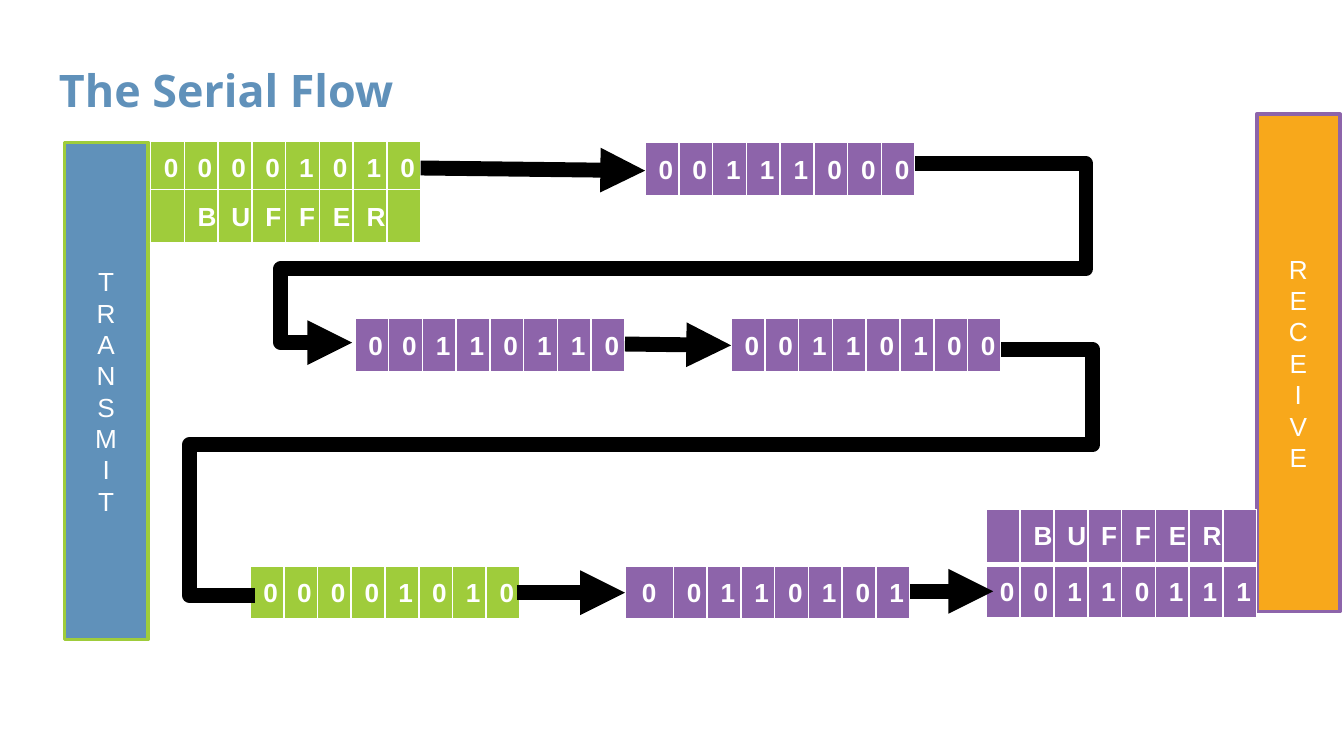
from lxml import etree
from pptx import Presentation
from pptx.dml.color import RGBColor
from pptx.enum.shapes import MSO_CONNECTOR as CONN, MSO_SHAPE as SHAPE
from pptx.enum.text import MSO_ANCHOR as ANCHOR, PP_ALIGN as ALIGN
from pptx.oxml.ns import qn
from pptx.util import Inches, Pt

BLUE = RGBColor(0x60, 0x91, 0xBA)
GREEN = RGBColor(0x9F, 0xCC, 0x3B)
PURPLE = RGBColor(0x8D, 0x64, 0xAA)
ORANGE = RGBColor(0xF8, 0xA8, 0x1B)
WHITE = RGBColor(0xFF, 0xFF, 0xFF)
BLACK = RGBColor(0, 0, 0)

# Content: positions are in inches
SLIDE_W = 10
SLIDE_H = SLIDE_W * 9 / 16
TITLE = "The Serial Flow"
BAR_W, BAR_H = 0.62, 3.7
CELL_W, CELL_H = 2.01 / 8, 0.41
WIDE_CELL = 0.36
BORDERS = {"a:lnL": 1, "a:lnR": 1, "a:lnT": 1, "a:lnB": 3}  # points

STATIONS = [  # word, left, top, fill, line
    ("TRANSMIT", 0.48, 1.06, BLUE, GREEN),
    ("RECEIVE", 9.35, 0.85, ORANGE, PURPLE),
]
BYTES = [  # cells, left, top, fill, first column width
    ("00110111", 7.34, 4.2, PURPLE, CELL_W),
    ("00110101", 4.65, 4.21, PURPLE, WIDE_CELL),
    ("00001010", 1.86, 4.21, GREEN, CELL_W),
    ("00110100", 5.44, 2.37, PURPLE, CELL_W),
    ("00110110", 2.64, 2.37, PURPLE, CELL_W),
    ("00111000", 4.8, 1.06, PURPLE, CELL_W),
    ("00001010", 1.12, 1.05, GREEN, CELL_W),
    (" BUFFER ", 1.12, 1.41, GREEN, CELL_W),
    (" BUFFER ", 7.34, 3.79, PURPLE, CELL_W),
]
ARROWS = [  # from x, from y, to x, to y
    (3.13, 1.25, 4.8, 1.27),
    (4.65, 2.56, 5.44, 2.57),
    (3.85, 4.41, 4.65, 4.41),
    (6.77, 4.4, 7.39, 4.4),
]
RETURNS = [  # corner points, arrowhead
    ([(6.81, 1.22), (8.08, 1.22), (8.08, 2), (2.09, 2), (2.09, 2.55), (2.62, 2.55)], True),
    ([(7.45, 2.6), (8.13, 2.6), (8.13, 3.31), (1.41, 3.31), (1.41, 4.43), (1.9, 4.43)], False),
]


def style_text(p, size, color, bold=False, name="Arial"):
    for r in p.runs:
        r.font.size, r.font.bold, r.font.name = Pt(size), bold, name
        r.font.color.rgb = color


def style_line(s, arrowhead):
    s.line.color.rgb = BLACK
    s.line.width = Pt(8)
    ln = s.line._get_or_add_ln()
    etree.SubElement(ln, qn("a:round"))
    if arrowhead:
        etree.SubElement(ln, qn("a:tailEnd"), type="triangle")


def add_borders(cell):
    tc_pr = cell._tc.get_or_add_tcPr()
    for tag, width in BORDERS.items():
        ln = etree.SubElement(tc_pr, qn(tag), w=str(Pt(width)))
        fill = etree.SubElement(ln, qn("a:solidFill"))
        etree.SubElement(fill, qn("a:srgbClr"), val=str(WHITE))


def add_station(shapes, word, left, top, fill, line):
    s = shapes.add_shape(SHAPE.RECTANGLE, Inches(left), Inches(top), Inches(BAR_W), Inches(BAR_H))
    s.shadow.inherit = False
    s.fill.solid()
    s.fill.fore_color.rgb = fill
    s.line.color.rgb = line
    s.line.width = Pt(2)
    tf = s.text_frame
    tf.text = "\n".join(word)
    tf.vertical_anchor = ANCHOR.MIDDLE
    for p in tf.paragraphs:
        p.alignment = ALIGN.CENTER
        style_text(p, 14, WHITE)


def add_byte(shapes, cells, left, top, fill, first_w):
    widths = [first_w] + [CELL_W] * (len(cells) - 1)
    table = shapes.add_table(1, len(cells), Inches(left), Inches(top),
                             Inches(sum(widths)), Inches(CELL_H)).table
    for col, (char, width) in enumerate(zip(cells, widths)):
        table.columns[col].width = Inches(width)
        cell = table.cell(0, col)
        add_borders(cell)
        cell.fill.solid()
        cell.fill.fore_color.rgb = fill
        cell.vertical_anchor = ANCHOR.MIDDLE
        cell.text = char.strip()
        p = cell.text_frame.paragraphs[0]
        p.alignment = ALIGN.CENTER if char.isdigit() else ALIGN.LEFT
        style_text(p, 14, WHITE, bold=True)


def add_arrow(shapes, *ends):
    s = shapes.add_connector(CONN.STRAIGHT, *map(Inches, ends))
    style_line(s, True)
    etree.SubElement(s._element.spPr, qn("a:effectLst"))


def add_return(shapes, points, arrowhead):
    corners = [(Inches(x), Inches(y)) for x, y in points]
    builder = shapes.build_freeform(*corners[0])
    builder.add_line_segments(corners[1:], close=False)
    s = builder.convert_to_shape()
    s.shadow.inherit = False
    s.fill.background()
    style_line(s, arrowhead)


prs = Presentation()
prs.slide_width, prs.slide_height = Inches(SLIDE_W), Inches(SLIDE_H)
shapes = prs.slides.add_slide(prs.slide_layouts[6]).shapes

# Title
tf = shapes.add_textbox(Inches(0.34), Inches(0.31), Inches(9.35), Inches(4.78)).text_frame
tf.word_wrap = True
tf.margin_left = tf.margin_top = tf.margin_right = tf.margin_bottom = Inches(0.1)
tf.text = TITLE
tf.paragraphs[0].line_spacing = 1.15
style_text(tf.paragraphs[0], 24, BLUE, bold=True, name="Open Sans")

# Stations, then bytes, then the flow between them
for station in STATIONS:
    add_station(shapes, *station)
for byte in BYTES:
    add_byte(shapes, *byte)
for arrow in ARROWS:
    add_arrow(shapes, *arrow)
for route in RETURNS:
    add_return(shapes, *route)

prs.save("out.pptx")
